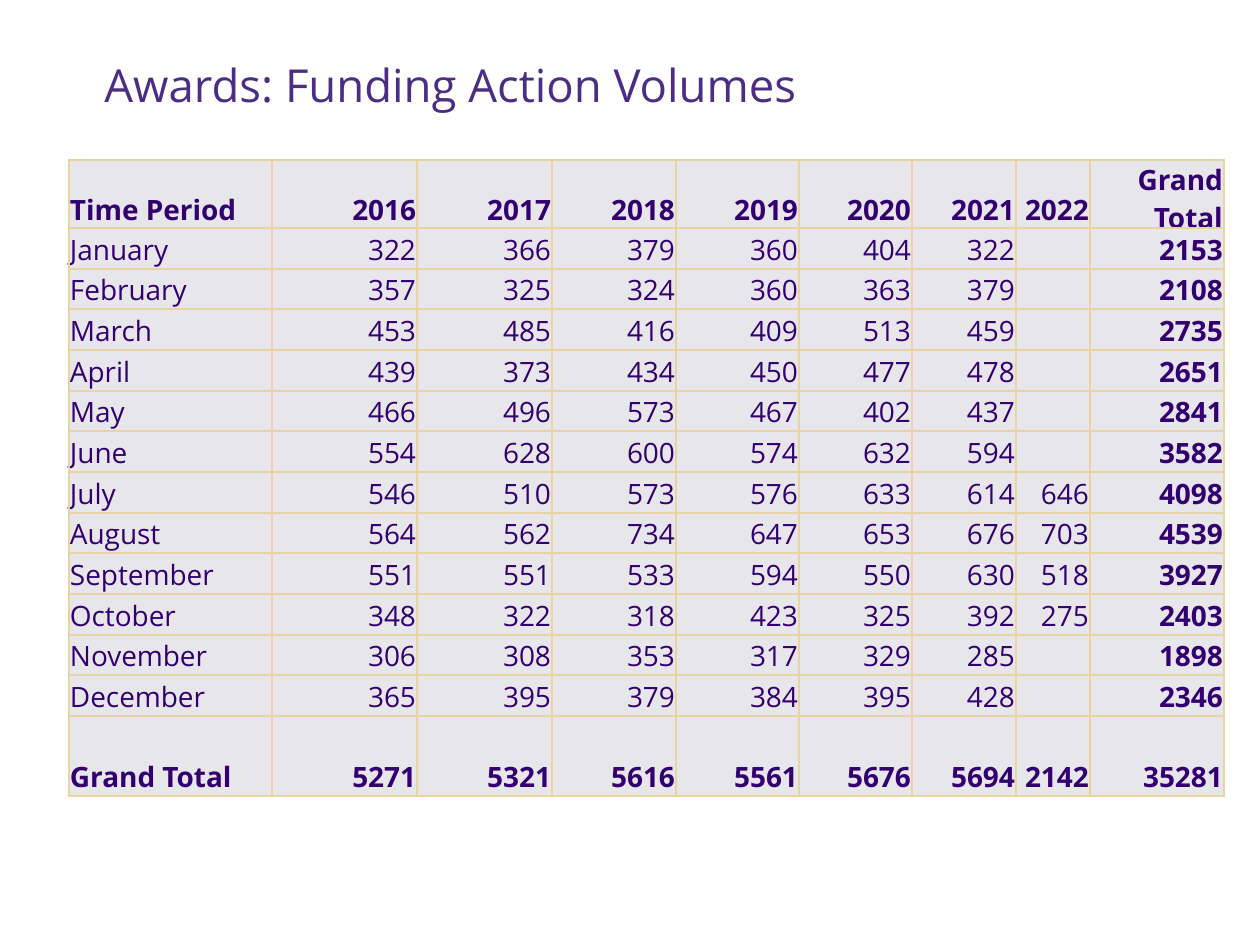
from dataclasses import dataclass

from lxml import etree
from pptx import Presentation
from pptx import util as u
from pptx.dml.color import RGBColor
from pptx.enum import text
from pptx.oxml import ns
from pptx.text.text import Font

EMU_PER_PX = 914400 / 126
COLUMNS = [203, 145, 135, 124, 123, 113, 104, 74, 134]
ROWS = [64] + [41, 40, 41] * 4 + [80]
AWARDS = """Time Period|2016|2017|2018|2019|2020|2021|2022|Grand Total
January|322|366|379|360|404|322||2153
February|357|325|324|360|363|379||2108
March|453|485|416|409|513|459||2735
April|439|373|434|450|477|478||2651
May|466|496|573|467|402|437||2841
June|554|628|600|574|632|594||3582
July|546|510|573|576|633|614|646|4098
August|564|562|734|647|653|676|703|4539
September|551|551|533|594|550|630|518|3927
October|348|322|318|423|325|392|275|2403
November|306|308|353|317|329|285||1898
December|365|395|379|384|395|428||2346
Grand Total|5271|5321|5616|5561|5676|5694|2142|35281"""


@dataclass(frozen=True)
class Theme:
    font: str = "Open Sans"
    title_size: int = 26
    cell_size: int = 16
    title: str = "4B2E83"
    ink: str = "33006F"
    fill: str = "E7E6EB"
    border: str = "E8D3A2"
    border_width: int = 1


def px(value):
    return u.Emu(round(value * EMU_PER_PX))


def apply(target, values):
    for name, value in values.items():
        setattr(target, name, value)


class Painter:
    def __init__(self, page, theme):
        self.page = page
        self.theme = theme

    def style(self, font, size, color, bold=False):
        apply(font, {"name": self.theme.font, "size": u.Pt(size), "bold": bold})
        font.color.rgb = RGBColor.from_string(color)

    def title(self, words, left, top, width, height):
        box = self.page.shapes.add_textbox(*map(px, (left, top, width, height)))
        apply(box.text_frame, {
            "word_wrap": True,
            "vertical_anchor": text.MSO_ANCHOR.BOTTOM,
            **{f"margin_{side}": u.Inches(0.1) for side in ("left", "right", "top", "bottom")},
        })
        para = box.text_frame.paragraphs[0]
        para.line_spacing = 0.9
        span = para.add_run()
        span.text = words
        self.style(span.font, self.theme.title_size, self.theme.title)

    def borders(self, cell):
        properties = cell._tc.get_or_add_tcPr()
        for position, side in enumerate(("lnL", "lnR", "lnT", "lnB")):
            line = etree.Element(ns.qn(f"a:{side}"), w=str(u.Pt(self.theme.border_width)))
            solid = etree.SubElement(line, ns.qn("a:solidFill"))
            etree.SubElement(solid, ns.qn("a:srgbClr"), val=self.theme.border)
            properties.insert(position, line)

    def cell(self, cell, words, align, bold):
        apply(cell, {
            "margin_left": px(1), "margin_right": px(1),
            "margin_top": px(1), "margin_bottom": 0,
            "vertical_anchor": text.MSO_ANCHOR.BOTTOM,
        })
        cell.fill.solid()
        cell.fill.fore_color.rgb = RGBColor.from_string(self.theme.fill)
        self.borders(cell)
        para = cell.text_frame.paragraphs[0]
        para.alignment = align
        if words:
            span = para.add_run()
            span.text = words
            font = span.font
        else:
            font = Font(para._p.get_or_add_endParaRPr())
        self.style(font, self.theme.cell_size, self.theme.ink, bold)

    def table(self, records, left, top, columns, rows):
        frame = self.page.shapes.add_table(
            len(rows), len(columns), px(left), px(top), px(sum(columns)), px(sum(rows)))
        grid = frame.table
        apply(grid, {"first_row": False, "horz_banding": False})
        for column, width in zip(grid.columns, columns):
            column.width = px(width)
        for row, height in zip(grid.rows, rows):
            row.height = px(height)
        last_row, last_column = len(rows) - 1, len(columns) - 1
        for r, record in enumerate(records):
            for c, words in enumerate(record):
                align = text.PP_ALIGN.RIGHT if c else text.PP_ALIGN.LEFT
                self.cell(grid.cell(r, c), words, align, r in (0, last_row) or c == last_column)


def main():
    deck = Presentation()
    apply(deck, {"slide_width": px(1260), "slide_height": px(945)})
    page = deck.slides.add_slide(deck.slide_layouts[6])
    painter = Painter(page, Theme())
    painter.title("Awards: Funding Action Volumes", 92, -11, 1128, 136)
    painter.table([line.split("|") for line in AWARDS.splitlines()], 69, 160, COLUMNS, ROWS)
    deck.save("out.pptx")


if __name__ == "__main__":
    main()
